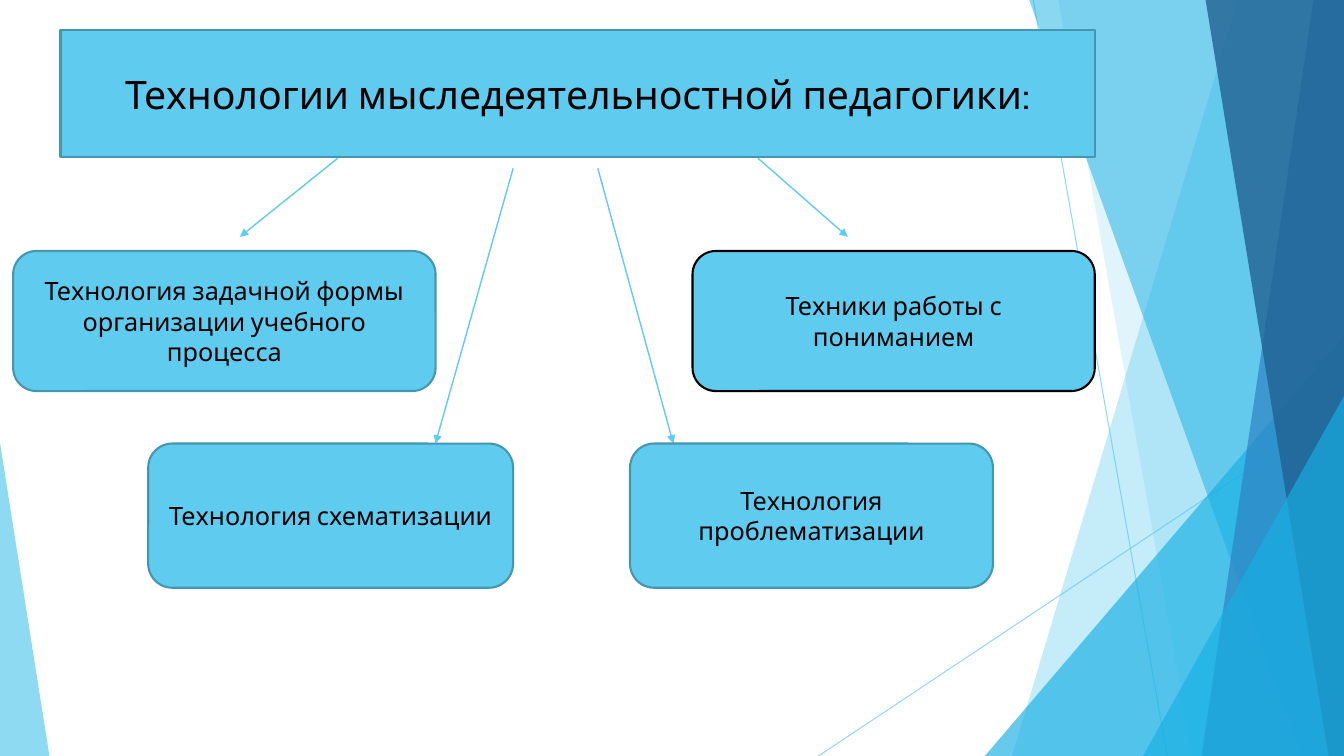
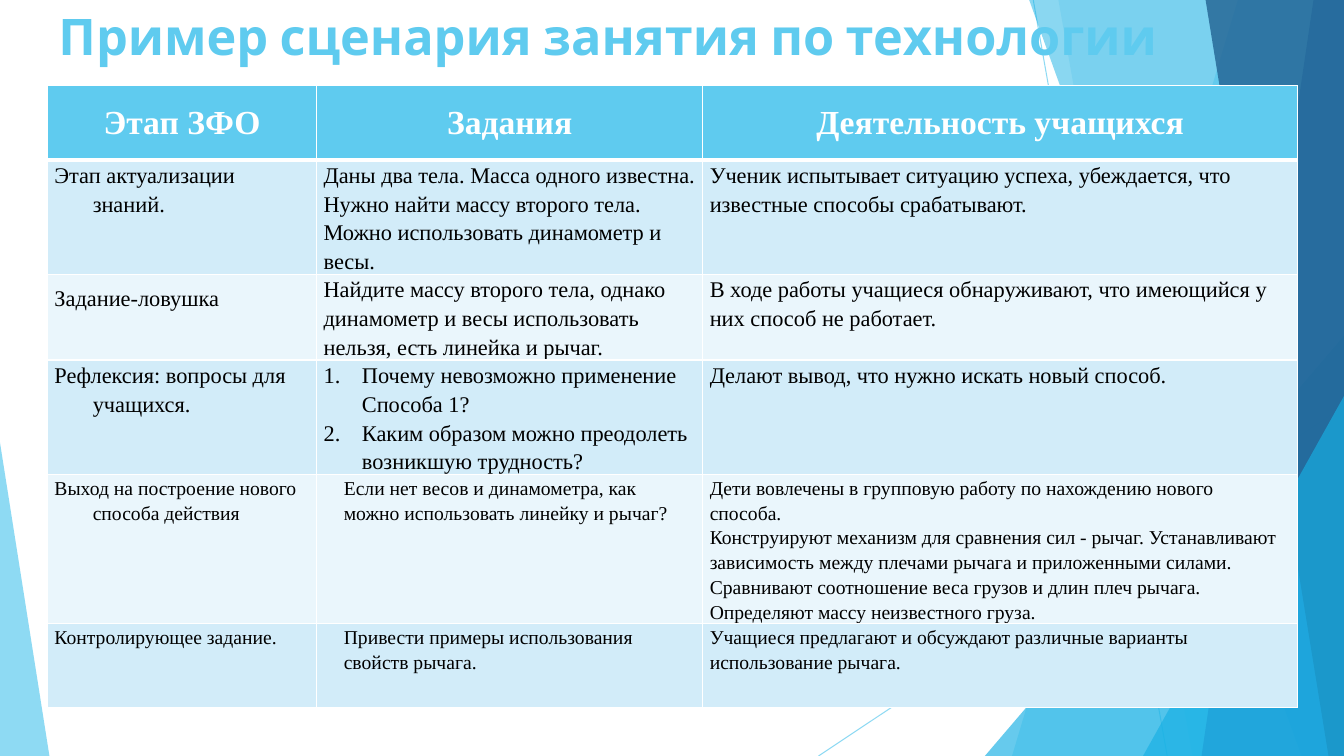
from itertools import cycle

from lxml import etree
from pptx import Presentation
from pptx.dml.color import RGBColor
from pptx.enum.shapes import MSO_CONNECTOR, MSO_SHAPE
from pptx.enum.text import MSO_ANCHOR, MSO_AUTO_SIZE, PP_ALIGN
from pptx.oxml.ns import qn
from pptx.util import Inches, Pt

LEFT, CENTER = PP_ALIGN.LEFT, PP_ALIGN.CENTER
TOP, MIDDLE = MSO_ANCHOR.TOP, MSO_ANCHOR.MIDDLE
ROUNDED, TRIANGLE = MSO_SHAPE.ROUNDED_RECTANGLE, MSO_SHAPE.ISOSCELES_TRIANGLE
STRAIGHT = MSO_CONNECTOR.STRAIGHT
NO_AUTOFIT = MSO_AUTO_SIZE.NONE


class Theme:
    sky = RGBColor.from_string("5FCBEF")
    cyan = RGBColor.from_string("17B0E4")
    blue = RGBColor.from_string("2E83C3")
    navy = RGBColor.from_string("226292")
    outline = RGBColor.from_string("4696B1")
    black = RGBColor.from_string("000000")
    white = RGBColor.from_string("FFFFFF")
    bands = (RGBColor.from_string("EAF6FC"), RGBColor.from_string("D2ECF9"))
    heading_font = "Cabin"
    table_font = "Times New Roman"
    title_size, diagram_title_size, box_size = Pt(36), Pt(28), Pt(18)
    header_size, row_size, small_row_size = Pt(24), Pt(16), Pt(14)


presentation = Presentation()
presentation.slide_width, presentation.slide_height = Inches(13.33), Inches(7.5)
COLUMN = presentation.slide_width // 100
ROW = presentation.slide_height // 100


def place(*values):
    """Turn alternating column and row counts (a 100 by 100 grid) into lengths."""
    return [int(value * unit) for value, unit in zip(values, cycle((COLUMN, ROW)))]


def write(frame, text, color, font_format, paragraph_format):
    frame.text = text
    for paragraph in frame.paragraphs:
        for name, value in paragraph_format.items():
            setattr(paragraph, name, value)
        for run in paragraph.runs:
            run.font.color.rgb = color
            for name, value in font_format.items():
                setattr(run.font, name, value)


layout = presentation.slide_layouts[5]
diagram_slide = presentation.slides.add_slide(layout)
table_slide = presentation.slides.add_slide(layout)
decoration = diagram_slide.shapes.add_group_shape()

# Lines: master decoration and diagram arrows
decoration_lines = [(76.88, 0, 86.85, 100), (100, 53.73, 60.9, 100)]
arrows = [
    (25.13, 20.93, 17.85, 31.33),
    (56.4, 20.93, 63.08, 31.33),
    (38.18, 22.27, 32.4, 58.67),
    (44.48, 22.27, 50.1, 58.67),
]
for container, lines, width, is_arrow in (
    (decoration, decoration_lines, Pt(0.75), False),
    (diagram_slide, arrows, Pt(1), True),
):
    for ends in lines:
        connector = container.shapes.add_connector(STRAIGHT, *place(*ends))
        connector.line.color.rgb = Theme.sky
        connector.line.width = width
        properties = connector.element.spPr
        if is_arrow:
            etree.SubElement(properties.find(qn("a:ln")), qn("a:tailEnd"), type="triangle")
        else:
            color = next(properties.iter(qn("a:srgbClr")))
            etree.SubElement(color, qn("a:alpha"), val="70000")
        etree.SubElement(properties, qn("a:effectLst"))

# Bands: column at the top edge, column at the bottom edge.
# Triangles: left, top, width, apex position.
facets = [
    ("band", (92.1, 75.3), Theme.sky, 36),
    ("band", (78.75, 88.73), Theme.sky, 20),
    ("triangle", (73.28, 44.4, 26.72, 1), Theme.cyan, 66),
    ("band", (76.58, 96.83), Theme.cyan, 50),
    ("band", (97.73, 89.4), Theme.blue, 70),
    ("band", (89.7, 98.85), Theme.navy, 80),
    ("triangle", (85.05, 52.4, 14.95, 1), Theme.cyan, 66),
    ("triangle", (0, 58.53, 3.68, 0), Theme.sky, 70),
]
for kind, geometry, fill, opacity in facets:
    if kind == "band":
        top_column, bottom_column = geometry
        builder = decoration.shapes.build_freeform(*place(top_column, 0))
        corners = [(100, 0), (100, 100), (bottom_column, 100)]
        builder.add_line_segments([place(*corner) for corner in corners], close=True)
        facet = builder.convert_to_shape()
    else:
        left, top, width, apex = geometry
        facet = decoration.shapes.add_shape(TRIANGLE, *place(left, top, width, 100 - top))
        facet.adjustments[0] = apex
    facet.shadow.inherit = False
    facet.fill.solid()
    facet.fill.fore_color.rgb = fill
    facet.line.fill.background()
    color = next(facet.element.spPr.iter(qn("a:srgbClr")))
    etree.SubElement(color, qn("a:alpha"), val=str(opacity * 1000))

# The decoration belongs to the master, behind its placeholders
master_tree = presentation.slide_master.element.cSld.spTree
master_tree.insert(2, decoration.element)
for number, identity in enumerate(master_tree.iter(qn("p:cNvPr")), start=1):
    identity.set("id", str(number))

# Diagram slide
diagram_title = diagram_slide.shapes.title
UPPER_TOP, UPPER_HEIGHT = 33.2, 18.53
LOWER_TOP, LOWER_HEIGHT = 58.67, 19.07
boxes = [
    ("Технологии мыследеятельностной педагогики:",
     (4.5, 4, 76.95, 16.8), Theme.outline, Theme.diagram_title_size),
    ("Технология задачной формы организации учебного процесса",
     (0.98, UPPER_TOP, 31.43, UPPER_HEIGHT), Theme.outline, Theme.box_size),
    ("Техники работы с пониманием",
     (51.53, UPPER_TOP, 29.93, UPPER_HEIGHT), Theme.black, Theme.box_size),
    ("Технология схематизации",
     (11.03, LOWER_TOP, 27.15, LOWER_HEIGHT), Theme.outline, Theme.box_size),
    ("Технология проблематизации",
     (46.88, LOWER_TOP, 27, LOWER_HEIGHT), Theme.outline, Theme.box_size),
]
for index, (text, area, outline, size) in enumerate(boxes):
    if index == 0:
        box = diagram_title
        box.left, box.top, box.width, box.height = place(*area)
        outline_shape = etree.SubElement(box.element.spPr, qn("a:prstGeom"), prst="roundRect")
        etree.SubElement(outline_shape, qn("a:avLst"))
    else:
        box = diagram_slide.shapes.add_shape(ROUNDED, *place(*area))
    box.shadow.inherit = False
    box.fill.solid()
    box.fill.fore_color.rgb = Theme.sky
    box.line.color.rgb = outline
    box.line.width = Pt(1.5)
    box.text_frame.auto_size = NO_AUTOFIT
    box.text_frame.vertical_anchor = MIDDLE
    write(box.text_frame, text, Theme.black,
          {"name": Theme.heading_font, "size": size}, {"alignment": CENTER})

# Table slide
title = table_slide.shapes.title
title.left, title.top, title.width, title.height = place(3.6, 0, 91.05, 19.2)
title.text_frame.auto_size = NO_AUTOFIT
title.text_frame.vertical_anchor = TOP
write(title.text_frame, "Пример сценария занятия по технологии", Theme.sky,
      {"name": Theme.heading_font, "size": Theme.title_size, "bold": True},
      {"alignment": LEFT})

column_widths = [20.03, 28.73, 44.25]
row_heights = [9.8, 15.1, 11.25, 15.1, 19.7, 11.1]
lesson = [
    ("Этап ЗФО", "Задания", "Деятельность учащихся"),
    ("Этап актуализации знаний.",
     "Даны два тела. Масса одного известна. Нужно найти массу второго тела. "
     "Можно использовать динамометр и весы.",
     "Ученик испытывает ситуацию успеха, убеждается, что известные способы срабатывают."),
    ("Задание-ловушка",
     "Найдите массу второго тела, однако динамометр и весы использовать нельзя, "
     "есть линейка и рычаг.",
     "В ходе работы учащиеся обнаруживают, что имеющийся у них способ не работает."),
    ("Рефлексия: вопросы для учащихся.",
     "Почему невозможно применение Способа 1?\n"
     "Каким образом можно преодолеть возникшую трудность?",
     "Делают вывод, что нужно искать новый способ."),
    ("Выход на построение нового способа действия",
     "Если нет весов и динамометра, как можно использовать линейку и рычаг?",
     "Дети вовлечены в групповую работу по нахождению нового способа.\n"
     "Конструируют механизм для сравнения сил - рычаг. Устанавливают зависимость "
     "между плечами рычага и приложенными силами. Сравнивают соотношение веса грузов "
     "и длин плеч рычага. Определяют массу неизвестного груза."),
    ("Контролирующее задание.",
     "Привести примеры использования свойств рычага.",
     "Учащиеся предлагают и обсуждают различные варианты использование рычага."),
]
HEADER, TRAP, QUESTIONS, FIRST_SMALL = 0, 2, 3, 4
HANGING, INDENT = int(2.85 * COLUMN), int(1.5 * COLUMN)

area = place(3.53, 11.33, sum(column_widths), sum(row_heights))
table = table_slide.shapes.add_table(len(lesson), len(column_widths), *area).table
for column, width in zip(table.columns, column_widths):
    column.width = int(width * COLUMN)
for row, height in zip(table.rows, row_heights):
    row.height = int(height * ROW)

for row_index, texts in enumerate(lesson):
    is_header = row_index == HEADER
    is_small = row_index >= FIRST_SMALL
    size = Theme.small_row_size if is_small else Theme.row_size
    font_format = {
        "name": Theme.table_font,
        "size": Theme.header_size if is_header else size,
        "bold": is_header,
    }
    for column_index, text in enumerate(texts):
        cell = table.cell(row_index, column_index)
        cell.margin_left = cell.margin_right = Inches(0.07)
        cell.margin_top = cell.margin_bottom = 0
        cell_properties = cell._tc.get_or_add_tcPr()
        for side in "LRTB":
            is_thick = (row_index, side) in ((HEADER, "B"), (HEADER + 1, "T"))
            border = etree.SubElement(cell_properties, qn(f"a:ln{side}"),
                                      w=str(Pt(3 if is_thick else 1)))
            border_fill = etree.SubElement(border, qn("a:solidFill"))
            etree.SubElement(border_fill, qn("a:srgbClr"), val=str(Theme.white))
        cell.fill.solid()
        cell.fill.fore_color.rgb = Theme.sky if is_header else Theme.bands[row_index % 2]

        is_loose = is_header or (row_index, column_index) == (TRAP, 0)
        write(cell.text_frame, text, Theme.white if is_header else Theme.black, font_format,
              {"alignment": CENTER if is_header else LEFT,
               "line_spacing": 1.5 if is_loose else 1.15})

        is_numbered = (row_index, column_index) == (QUESTIONS, 1)
        for paragraph in cell.text_frame.paragraphs:
            paragraph_properties = paragraph._p.get_or_add_pPr()
            if is_numbered or (column_index == 0 and not is_header):
                paragraph_properties.set("marL", str(HANGING))
                paragraph_properties.set("indent", str(-HANGING))
            elif column_index == 1 and is_small:
                paragraph_properties.set("marL", str(INDENT))
            if is_numbered:
                etree.SubElement(paragraph_properties, qn("a:buAutoNum"), type="arabicPeriod")

presentation.save("out.pptx")
